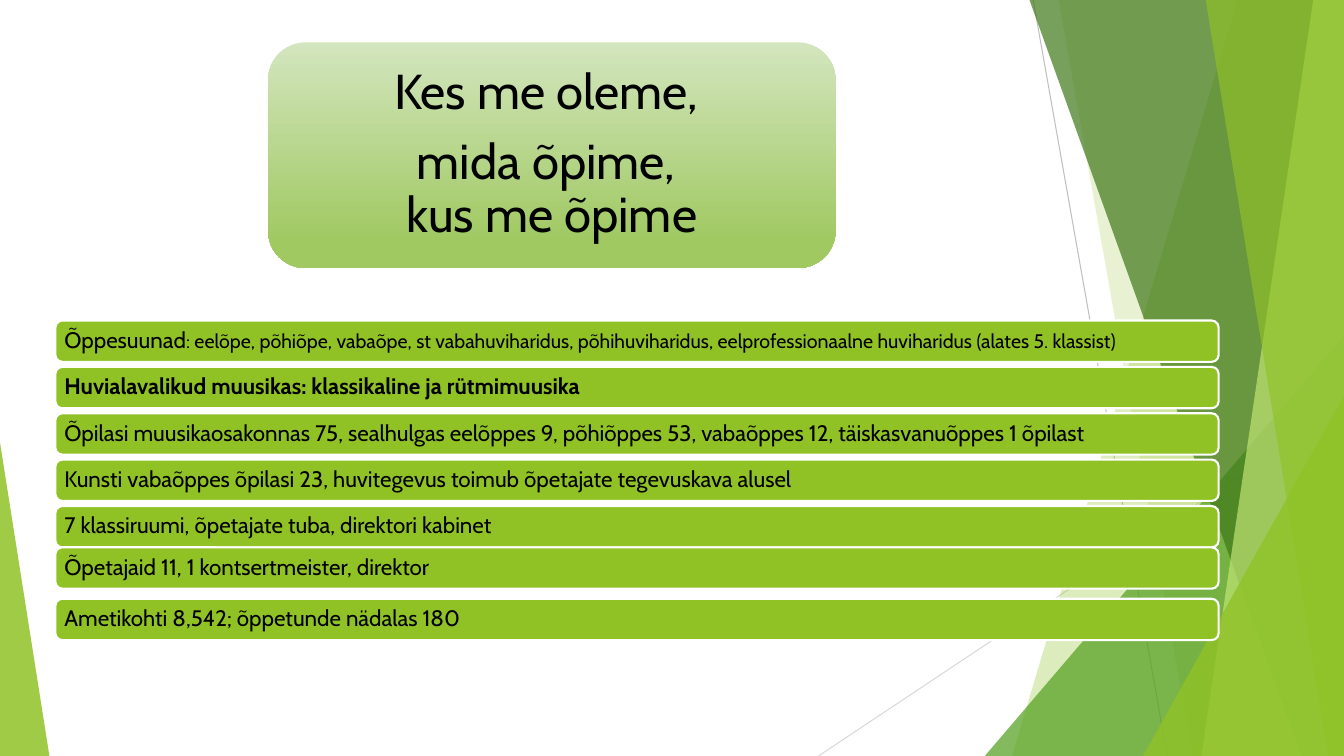
from dataclasses import dataclass

from lxml import etree
from pptx import Presentation
from pptx.dml.color import RGBColor
from pptx.enum.shapes import MSO_CONNECTOR, MSO_SHAPE
from pptx.enum.text import MSO_ANCHOR, PP_ALIGN
from pptx.oxml.ns import qn
from pptx.util import Pt

STRAIGHT = MSO_CONNECTOR.STRAIGHT
TRIANGLE = MSO_SHAPE.ISOSCELES_TRIANGLE
ROUNDED = MSO_SHAPE.ROUNDED_RECTANGLE
MIDDLE = MSO_ANCHOR.MIDDLE
LEFT, CENTER = PP_ALIGN.LEFT, PP_ALIGN.CENTER

SLIDE_WIDTH, SLIDE_HEIGHT = 960, 540


@dataclass(frozen=True)
class Theme:
    font: str = "Cabin"
    ink: str = "000000"
    white: str = "FFFFFF"
    lime: str = "90C226"
    pale_lime: str = "C0E474"
    green: str = "54A021"
    forest: str = "3F7819"
    gray: str = "BFBFBF"
    light_gray: str = "D9D9D9"
    title_top: str = "D3E5BE"
    title_bottom: str = "A0C962"
    title_size: int = 35
    row_size: int = 16
    detail_size: int = 14


def add_text(paragraph, text, *, font, size, color, bold=False):
    for index, line in enumerate(text.split("\n")):
        if index:
            paragraph.add_line_break()
        run = paragraph.add_run()
        run.text = line
        run.font.name = font
        run.font.size = Pt(size)
        run.font.bold = bold
        run.font.color.rgb = RGBColor.from_string(color)


class SlideBuilder:
    def __init__(self, slide, theme):
        self.shapes = slide.shapes
        self.theme = theme

    def line(self, x1, y1, x2, y2, color):
        connector = self.shapes.add_connector(STRAIGHT, Pt(x1), Pt(y1), Pt(x2), Pt(y2))
        connector.line.color.rgb = RGBColor.from_string(color)
        connector.line.width = Pt(0.75)
        etree.SubElement(connector._element.spPr, qn("a:effectLst"))

    def tint(self, shape, color, opacity):
        shape.shadow.inherit = False
        shape.line.fill.background()
        shape.fill.solid()
        shape.fill.fore_color.rgb = RGBColor.from_string(color)
        color_node = shape._element.spPr.find(qn("a:solidFill"))[0]
        etree.SubElement(color_node, qn("a:alpha"), val=str(opacity * 1000))

    def pane(self, top_x, bottom_x, color, opacity):
        outline = self.shapes.build_freeform(Pt(top_x), Pt(-0.72))
        corners = [(SLIDE_WIDTH, -0.72), (SLIDE_WIDTH, SLIDE_HEIGHT), (bottom_x, SLIDE_HEIGHT)]
        outline.add_line_segments([(Pt(x), Pt(y)) for x, y in corners], close=True)
        self.tint(outline.convert_to_shape(), color, opacity)

    def triangle(self, left, top, width, apex, color, opacity):
        wedge = self.shapes.add_shape(
            TRIANGLE, Pt(left), Pt(top), Pt(width), Pt(SLIDE_HEIGHT - top))
        wedge.adjustments[0] = apex
        self.tint(wedge, color, opacity)

    def card(self, left, top, width, height, inset, paragraphs, align=LEFT):
        card = self.shapes.add_shape(ROUNDED, Pt(left), Pt(top), Pt(width), Pt(height))
        card.shadow.inherit = False
        frame = card.text_frame
        frame.word_wrap = True
        frame.vertical_anchor = MIDDLE
        frame.margin_left = frame.margin_right = Pt(inset)
        frame.margin_top = frame.margin_bottom = Pt(inset)
        for index, runs in enumerate(paragraphs):
            paragraph = frame.add_paragraph() if index else frame.paragraphs[0]
            paragraph.alignment = align
            paragraph.line_spacing = 0.9
            paragraph.space_after = Pt(round(0.35 * runs[0][1]))
            for text, size, bold in runs:
                add_text(paragraph, text, font=self.theme.font, size=size,
                         color=self.theme.ink, bold=bold)
        return card

    def title(self, lines):
        theme = self.theme
        paragraphs = [[(line, theme.title_size, False)] for line in lines]
        title = self.card(191.52, 30.24, 405.36, 161.28, 10.8, paragraphs, CENTER)
        title.line.fill.background()
        title.fill.gradient()
        title.fill.gradient_angle = 270
        stops = [(0, theme.title_top), (0.88, theme.title_bottom)]
        for stop, (position, color) in zip(title.fill.gradient_stops, stops):
            stop.position = position
            stop.color.rgb = RGBColor.from_string(color)

    def row(self, top, runs):
        row = self.card(39.6, top, 830.88, 29.52, 5.04, [runs])
        row.fill.solid()
        row.fill.fore_color.rgb = RGBColor.from_string(self.theme.lime)
        row.line.color.rgb = RGBColor.from_string(self.theme.white)
        row.line.width = Pt(1.5)


def draw_backdrop(builder, theme):
    builder.line(738, 0, 833.76, SLIDE_HEIGHT, theme.gray)
    builder.line(SLIDE_WIDTH, 290.16, 584.64, SLIDE_HEIGHT, theme.light_gray)
    builder.pane(884.16, 722.88, theme.lime, 30)
    builder.pane(756, 851.76, theme.lime, 20)
    builder.triangle(703.44, 239.76, 256.56, 1, theme.green, 72)
    builder.pane(735.12, 929.52, theme.forest, 70)
    builder.pane(938.16, 858.24, theme.pale_lime, 70)
    builder.pane(861.12, 948.96, theme.lime, 65)
    builder.triangle(816.48, 282.96, 143.52, 1, theme.lime, 80)
    builder.triangle(0, 316.08, 35.28, 0, theme.lime, 85)


def draw_facts(builder, theme):
    size = theme.row_size
    directions = (": eelõpe, põhiõpe, vabaõpe, st vabahuviharidus, põhihuviharidus, "
                  "eelprofessionaalne huviharidus (alates 5. klassist)")
    students = ("Õpilasi muusikaosakonnas 75, sealhulgas eelõppes 9, põhiõppes 53, "
                "vabaõppes 12, täiskasvanuõppes 1 õpilast")
    art = "Kunsti vabaõppes õpilasi 23, huvitegevus toimub õpetajate tegevuskava alusel"
    teachers = [("Õpetajaid 11, 1 kontsertmeister, direktor", size, False)]
    facts = [
        [("Õppesuunad", size, False), (directions, theme.detail_size, False)],
        [("Huvialavalikud muusikas: klassikaline ja rütmimuusika", size, True)],
        [(students, size, False)],
        [(art, size, False)],
        [("7 klassiruumi, õpetajate tuba, direktori kabinet", size, False)],
        teachers,
        [("Ametikohti 8,542; õppetunde nädalas 180", size, False)],
    ]
    for index, fact in enumerate(facts):
        lift = 3.6 if fact is teachers else 0
        builder.row(228.96 + index * 33.12 - lift, fact)


def main():
    presentation = Presentation()
    presentation.slide_width = Pt(SLIDE_WIDTH)
    presentation.slide_height = Pt(SLIDE_HEIGHT)
    theme = Theme()
    slide = presentation.slides.add_slide(presentation.slide_layouts[6])
    builder = SlideBuilder(slide, theme)
    draw_backdrop(builder, theme)
    builder.title(["Kes me oleme, ", "mida õpime, \nkus me õpime"])
    draw_facts(builder, theme)
    presentation.save("out.pptx")


if __name__ == "__main__":
    main()
